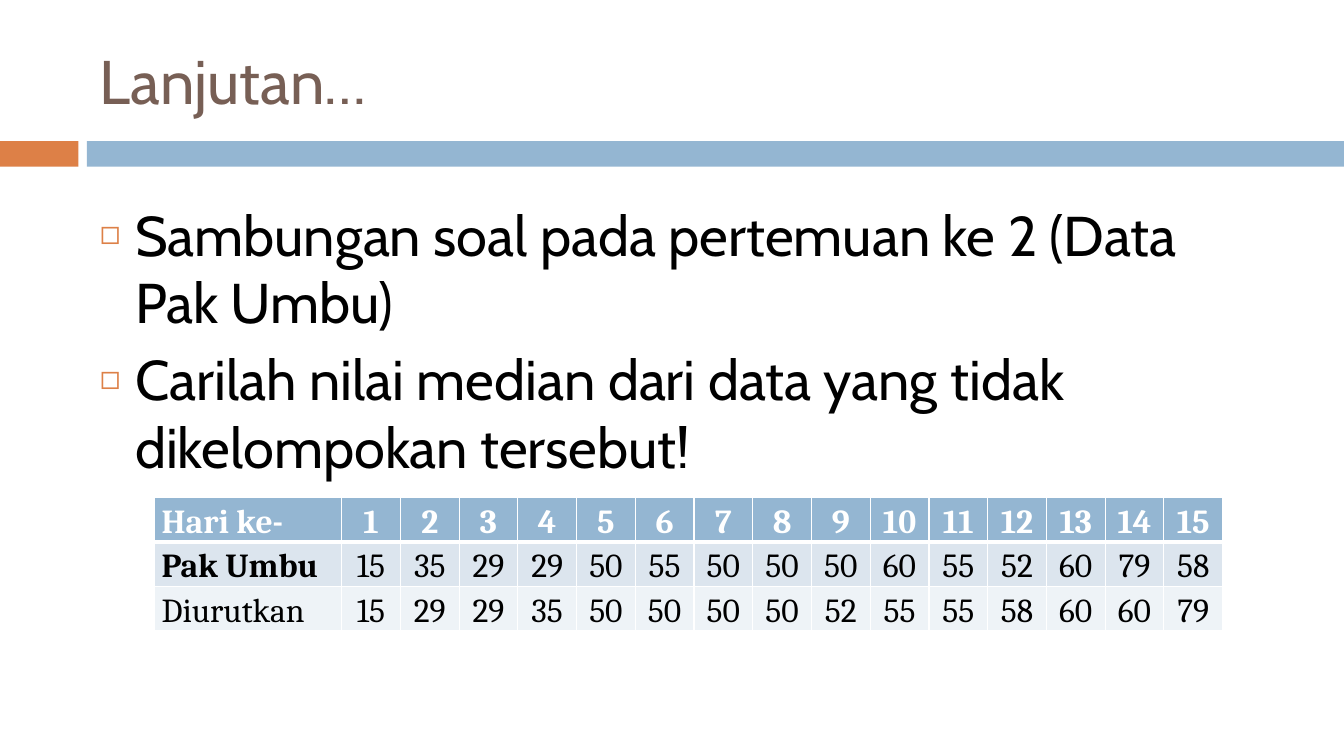
from lxml.etree import SubElement
from pptx import Presentation
from pptx.dml.color import RGBColor
from pptx.enum.shapes import MSO_SHAPE
from pptx.enum.text import MSO_ANCHOR, MSO_AUTO_SIZE, PP_ALIGN
from pptx.oxml.ns import qn
from pptx.util import Cm, Pt

ORANGE = RGBColor(0xDD, 0x80, 0x47)
BLUE = RGBColor(0x94, 0xB6, 0xD2)
BROWN = RGBColor(0x77, 0x5F, 0x55)
BLACK = RGBColor(0, 0, 0)
WHITE = RGBColor(0xFF, 0xFF, 0xFF)
PALE_BLUE = RGBColor(0xDC, 0xE5, 0xEE)
PALEST_BLUE = RGBColor(0xEE, 0xF3, 0xF7)

TITLE = "Lanjutan…"
BULLETS = [
    "Sambungan soal pada pertemuan ke 2 (Data Pak Umbu)",
    "Carilah nilai median dari data yang tidak dikelompokan tersebut!",
]
DAYS = list(range(1, 16))
SALES = [15, 35, 29, 29, 50, 55, 50, 50, 50, 60, 55, 52, 60, 79, 58]
TABLE_ROWS = [
    {"label": "Hari ke-", "values": DAYS, "fill": BLUE, "color": WHITE,
     "bold_label": True, "bold_values": True, "anchor": MSO_ANCHOR.TOP,
     "label_align": PP_ALIGN.JUSTIFY, "bottom_line": 3},
    {"label": "Pak Umbu", "values": SALES, "fill": PALE_BLUE, "color": BLACK,
     "bold_label": True, "bold_values": False, "anchor": MSO_ANCHOR.MIDDLE,
     "label_align": PP_ALIGN.LEFT, "bottom_line": 1},
    {"label": "Diurutkan", "values": sorted(SALES), "fill": PALEST_BLUE, "color": BLACK,
     "bold_label": False, "bold_values": False, "anchor": MSO_ANCHOR.MIDDLE,
     "label_align": PP_ALIGN.LEFT, "bottom_line": 1},
]

SLIDE_WIDTH = Cm(33.87)
BAR_TOP, BAR_HEIGHT = Cm(3.56), Cm(0.64)
BLUE_BAR_LEFT = Cm(2.19)
BARS = [
    (0, Cm(1.98), ORANGE),
    (BLUE_BAR_LEFT, SLIDE_WIDTH - BLUE_BAR_LEFT, BLUE),
]
LABEL_WIDTH, VALUE_WIDTH, ROW_HEIGHT = Cm(4.72), Cm(1.48), Cm(0.86)
BULLET_INDENT = Cm(0.89)


def add_run(paragraph, text, font_name, size, color, bold=False):
    run = paragraph.add_run()
    run.text = text
    run.font.name = font_name
    run.font.size = Pt(size)
    run.font.color.rgb = color
    run.font.bold = bold


def place(shape, left, top, width, height):
    shape.left, shape.top, shape.width, shape.height = left, top, width, height
    shape.text_frame.word_wrap = True
    shape.text_frame.auto_size = MSO_AUTO_SIZE.NONE


def add_bullet(paragraph):
    properties = paragraph._p.get_or_add_pPr()
    properties.set("marL", str(BULLET_INDENT))
    properties.set("indent", str(-BULLET_INDENT))
    color = SubElement(properties, qn("a:buClr"))
    SubElement(color, qn("a:srgbClr"), val=str(ORANGE))
    SubElement(properties, qn("a:buSzPct"), val="60000")
    SubElement(properties, qn("a:buChar"), char="◻")


def add_borders(cell, top_line, bottom_line):
    properties = cell._tc.get_or_add_tcPr()
    for side, width in (("L", 1), ("R", 1), ("T", top_line), ("B", bottom_line)):
        line = SubElement(properties, qn(f"a:ln{side}"), w=str(Pt(width)))
        fill = SubElement(line, qn("a:solidFill"))
        SubElement(fill, qn("a:srgbClr"), val=str(WHITE))


def fill_cell(cell, text, row, bold, align, top_line):
    add_borders(cell, top_line, row["bottom_line"])
    cell.fill.solid()
    cell.fill.fore_color.rgb = row["fill"]
    cell.margin_left = cell.margin_right = Cm(0.18)
    cell.margin_top = cell.margin_bottom = 0
    cell.vertical_anchor = row["anchor"]
    paragraph = cell.text_frame.paragraphs[0]
    paragraph.alignment = align
    paragraph.line_spacing = 1.15
    add_run(paragraph, text, "Cambria", 24, row["color"], bold)


def add_bars(slide):
    for left, width, color in BARS:
        bar = slide.shapes.add_shape(MSO_SHAPE.RECTANGLE, left, BAR_TOP, width, BAR_HEIGHT)
        bar.shadow.inherit = False
        bar.fill.solid()
        bar.fill.fore_color.rgb = color
        bar.line.fill.background()


def add_texts(slide):
    title = slide.shapes.title
    place(title, Cm(2.26), Cm(0.64), Cm(30.2), Cm(2.74))
    title.text_frame.vertical_anchor = MSO_ANCHOR.MIDDLE
    paragraph = title.text_frame.paragraphs[0]
    paragraph.alignment = PP_ALIGN.LEFT
    add_run(paragraph, TITLE, "Cabin", 44, BROWN)

    body = slide.placeholders[1]
    place(body, Cm(2.26), Cm(4.93), Cm(28.47), Cm(10.31))
    frame = body.text_frame
    frame.vertical_anchor = MSO_ANCHOR.TOP
    for index, text in enumerate(BULLETS):
        paragraph = frame.add_paragraph() if index else frame.paragraphs[0]
        paragraph.space_before = Pt(7)
        add_bullet(paragraph)
        add_run(paragraph, text, "Cabin", 40, BLACK)


def add_data_table(slide):
    widths = [LABEL_WIDTH] + [VALUE_WIDTH] * len(DAYS)
    table = slide.shapes.add_table(
        len(TABLE_ROWS), len(widths), Cm(3.89), Cm(12.53),
        sum(widths), ROW_HEIGHT * len(TABLE_ROWS)).table
    for column, width in zip(table.columns, widths):
        column.width = width
    top_line = 1
    for row_index, row in enumerate(TABLE_ROWS):
        table.rows[row_index].height = ROW_HEIGHT
        fill_cell(table.cell(row_index, 0), row["label"], row,
                  row["bold_label"], row["label_align"], top_line)
        for column_index, value in enumerate(row["values"], start=1):
            fill_cell(table.cell(row_index, column_index), str(value), row,
                      row["bold_values"], PP_ALIGN.CENTER, top_line)
        top_line = row["bottom_line"]


def main():
    presentation = Presentation()
    presentation.slide_width = SLIDE_WIDTH
    presentation.slide_height = Cm(19.05)
    slide = presentation.slides.add_slide(presentation.slide_layouts[1])
    add_bars(slide)
    add_texts(slide)
    add_data_table(slide)
    presentation.save("out.pptx")


if __name__ == "__main__":
    main()
